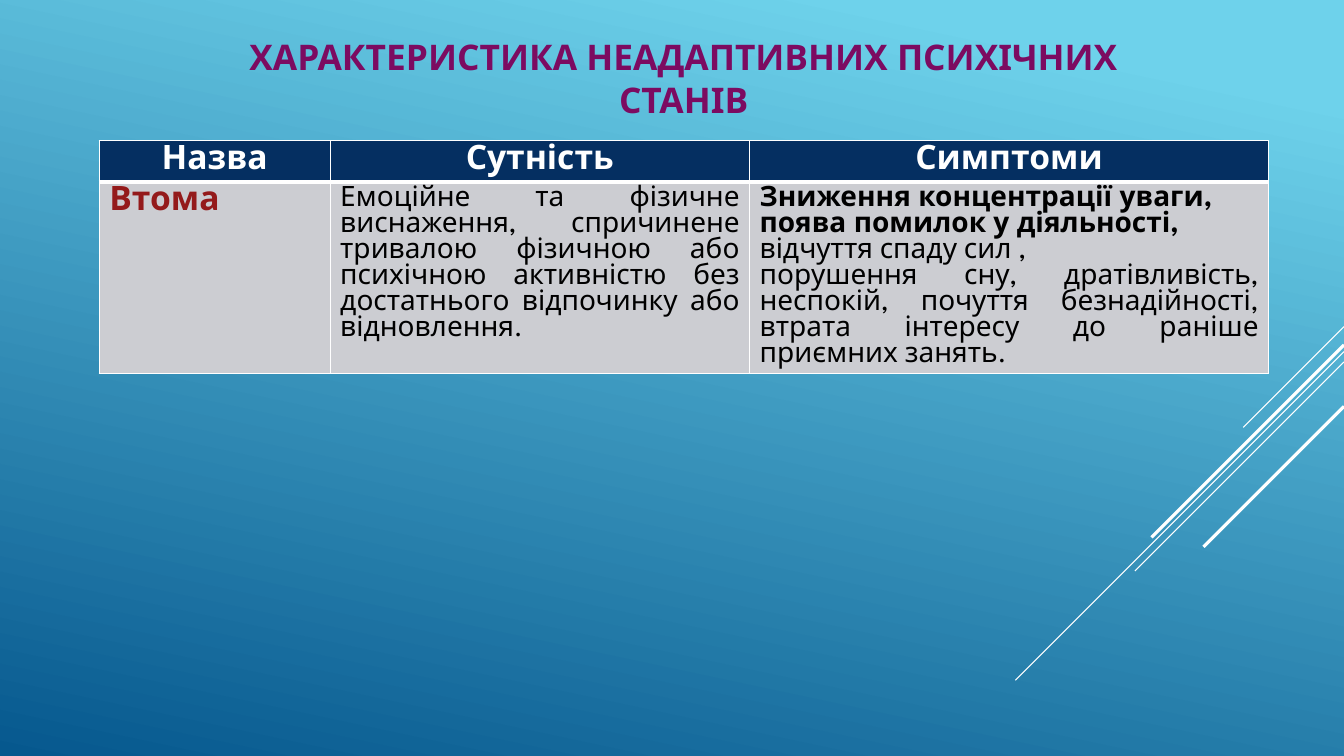
from lxml import etree
from pptx import Presentation
from pptx.dml.color import RGBColor
from pptx.enum.shapes import MSO_CONNECTOR
from pptx.enum.text import MSO_ANCHOR, PP_ALIGN
from pptx.oxml.ns import qn
from pptx.util import Cm, Pt

CENTER, JUSTIFY = PP_ALIGN.CENTER, PP_ALIGN.JUSTIFY
MIDDLE = MSO_ANCHOR.MIDDLE
STRAIGHT = MSO_CONNECTOR.STRAIGHT
WIDTH, HEIGHT = 33.87, 19.05


def color(value):
    return RGBColor.from_string(value)


class Deck:
    font = "League Spartan"
    white, black, plum, red = "FFFFFF", "000000", "7C0B61", "941A1B"
    navy, grey = "052F61", "CCCDD2"

    def __init__(self):
        self.prs = Presentation()
        self.prs.slide_width, self.prs.slide_height = Cm(WIDTH), Cm(HEIGHT)
        self.s = self.prs.slides.add_slide(self.prs.slide_layouts[5])

    def background(self, stops, angle):
        fill = self.s.background.fill
        fill.gradient()
        fill.gradient_angle = angle
        for stop, (position, value) in zip(fill.gradient_stops, stops):
            stop.position = position
            stop.color.rgb = color(value)

    def format(self, p, size, value, bold, align):
        p.alignment, p.line_spacing = align, 1.0
        p.space_before = p.space_after = Pt(0)
        p.font.name, p.font.size, p.font.bold = self.font, Pt(size), bold
        p.font.color.rgb = color(value)

    def title(self, text, x, y, w, h):
        sp = self.s.shapes.title
        sp.left, sp.top, sp.width, sp.height = Cm(x), Cm(y), Cm(w), Cm(h)
        tf = sp.text_frame
        tf.text = text
        tf.word_wrap = True
        tf.vertical_anchor = MIDDLE
        self.format(tf.paragraphs[0], 25.2, self.plum, True, CENTER)

    def diagonal(self, y, length, weight):
        line = self.s.shapes.add_connector(
            STRAIGHT, Cm(WIDTH), Cm(y), Cm(WIDTH - length), Cm(y + length))
        line.line.color.rgb = color(self.white)
        line.line.width = Pt(weight)
        etree.SubElement(line._element.spPr, qn("a:effectLst"))

    def border(self, cell, side, weight):
        tcPr = cell._tc.get_or_add_tcPr()
        ln = etree.SubElement(tcPr, qn(f"a:ln{side}"), w=str(Pt(weight)))
        fill = etree.SubElement(ln, qn("a:solidFill"))
        etree.SubElement(fill, qn("a:srgbClr"), val=self.white)

    def cell(self, cell, paragraphs, fill, borders, size, value, align):
        for side, weight in zip("LRTB", borders):
            self.border(cell, side, weight)
        cell.fill.solid()
        cell.fill.fore_color.rgb = color(fill)
        tf = cell.text_frame
        tf.text = "\n".join(text for text, bold in paragraphs)
        for p, (text, bold) in zip(tf.paragraphs, paragraphs):
            self.format(p, size, value, bold, align)

    def table(self, x, y, widths, heights, header, body):
        table = self.s.shapes.add_table(
            len(heights), len(widths), Cm(x), Cm(y),
            Cm(sum(widths)), Cm(sum(heights))).table
        for row, height in zip(table.rows, heights):
            row.height = Cm(height)
        for i, (width, name, paragraphs) in enumerate(zip(widths, header, body)):
            table.columns[i].width = Cm(width)
            self.cell(table.cell(0, i), [(name, True)], self.navy,
                      (1, 1, 1, 3), 24, self.white, CENTER)
            size, value = (20, self.black) if i else (24, self.red)
            self.cell(table.cell(1, i), paragraphs, self.grey,
                      (1, 1, 3, 1), size, value, JUSTIFY)


def main():
    deck = Deck()
    deck.background([(0.1, "6ED2EB"), (1, "06588E")], 258)
    for y, length, weight in [(8.23, 2.54, 0.75), (8.86, 8.28, 0.75),
                              (9.12, 5.27, 0.75), (8.69, 4.85, 2.25),
                              (10.24, 3.54, 2.25)]:
        deck.diagonal(y, length, weight)
    deck.title("ХАРАКТЕРИСТИКА НЕАДАПТИВНИХ ПСИХІЧНИХ СТАНІВ",
               4.58, 0.84, 25.3, 2.24)
    deck.table(
        2.5, 3.55, [5.82, 10.57, 13.08], [1.04, 4.83],
        ["Назва", "Сутність", "Симптоми"],
        [[("Втома", True)],
         [("Емоційне та фізичне виснаження, спричинене тривалою фізичною "
           "або психічною активністю без достатнього відпочинку або "
           "відновлення.", False)],
         [("Зниження концентрації уваги,", True),
          ("поява помилок у діяльності,", True),
          ("відчуття спаду сил ,", False),
          ("порушення сну, дратівливість, неспокій, почуття безнадійності, "
           "втрата інтересу до раніше приємних занять.", False)]])
    deck.prs.save("out.pptx")


if __name__ == "__main__":
    main()
